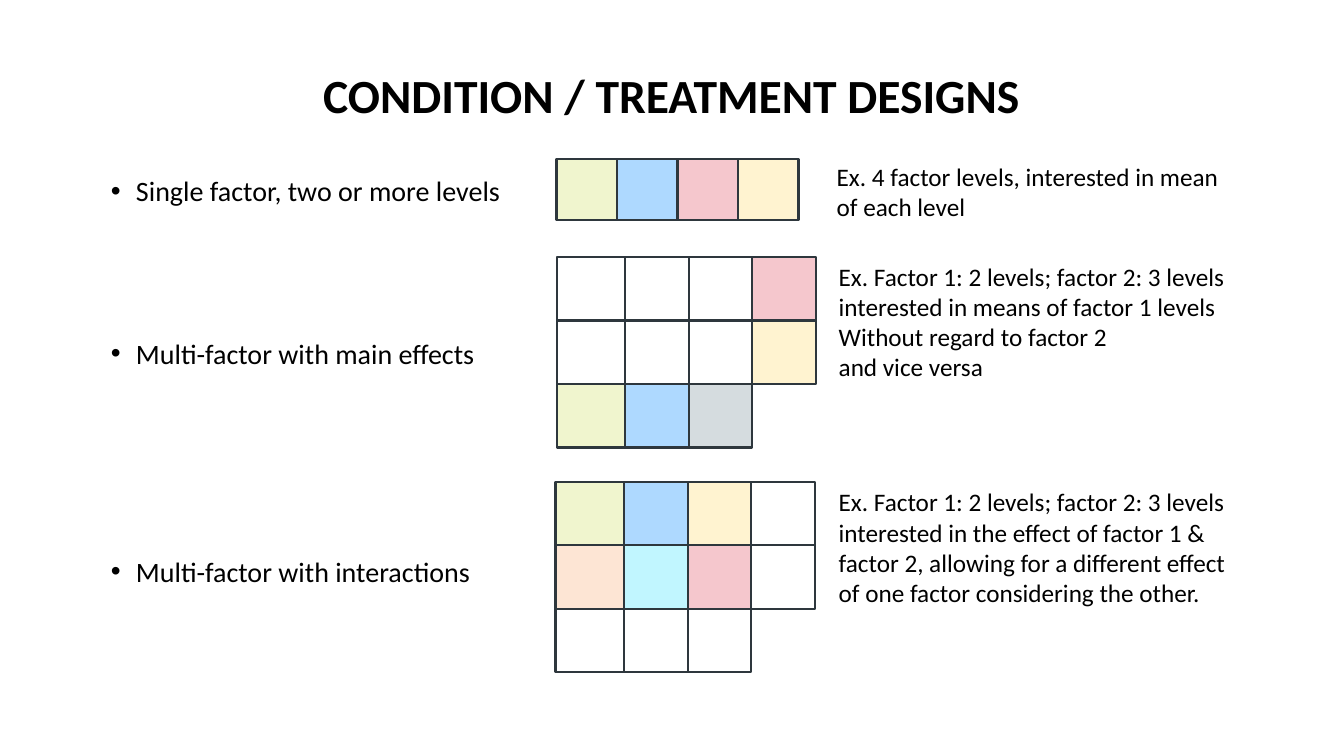
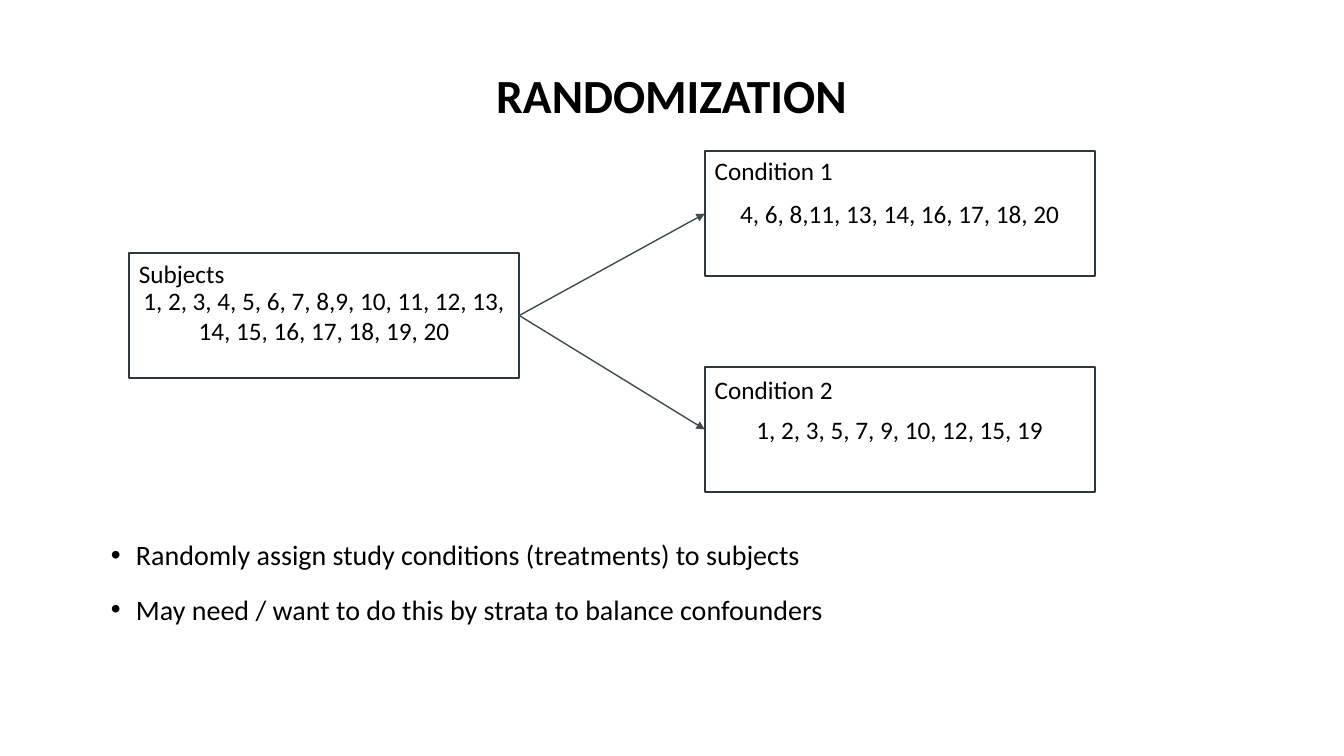
from lxml.etree import SubElement
from pptx import Presentation
from pptx.dml.color import RGBColor
from pptx.enum.shapes import MSO_CONNECTOR, MSO_SHAPE
from pptx.enum.text import MSO_ANCHOR, MSO_AUTO_SIZE, PP_ALIGN
from pptx.oxml.ns import qn
from pptx.util import Pt

PX = 9144  # EMU per px, 100 px to the inch

BLACK = RGBColor(0x00, 0x00, 0x00)
OUTLINE = RGBColor(0x2E, 0x37, 0x3D)
ARROW = RGBColor(0x3E, 0x4B, 0x52)
GREEN = RGBColor(0xF0, 0xF5, 0xCE)
BLUE = RGBColor(0xAE, 0xD9, 0xFF)
PINK = RGBColor(0xF5, 0xC7, 0xCD)
YELLOW = RGBColor(0xFF, 0xF3, 0xD0)
GRAY = RGBColor(0xD5, 0xDC, 0xDF)
PEACH = RGBColor(0xFD, 0xE5, 0xD4)
CYAN = RGBColor(0xC1, 0xF6, 0xFF)


def px(*lengths):
    return [length * PX for length in lengths]


def write(frame, text, size=18, bold=False, align=PP_ALIGN.LEFT,
          anchor=MSO_ANCHOR.TOP, spacing=1.0, bullet=False, gaps=()):
    """Fill a frame, one paragraph per line; gaps are points between them."""
    frame.word_wrap = True
    frame.auto_size = MSO_AUTO_SIZE.NONE
    frame.vertical_anchor = anchor
    frame.text = text
    for index, paragraph in enumerate(frame.paragraphs):
        if bullet:
            props = paragraph._p.get_or_add_pPr()
            props.set("marL", str(25 * PX))
            props.set("indent", str(-25 * PX))
            SubElement(props, qn("a:buFont")).set("typeface", "Arial")
            SubElement(props, qn("a:buChar")).set("char", "•")
        paragraph.alignment = align
        paragraph.line_spacing = spacing
        paragraph.space_before = Pt(gaps[index - 1] if index and gaps else 0)
        for run in paragraph.runs:
            run.font.name = "Calibri"
            run.font.size = Pt(size)
            run.font.bold = bold
            run.font.color.rgb = BLACK


class Deck:
    def __init__(self):
        self.file = Presentation()
        self.file.slide_width, self.file.slide_height = px(1333, 750)
        self.slide = None

    def new_slide(self, heading):
        self.slide = self.file.slides.add_slide(self.file.slide_layouts[5])
        title = self.slide.shapes.title
        title.left, title.top, title.width, title.height = px(100, 67, 1132, 145)
        write(title.text_frame, heading, size=34, bold=True,
              align=PP_ALIGN.CENTER, spacing=0.9)

    def text(self, left, top, width, height, text, **style):
        box = self.slide.shapes.add_textbox(*px(left, top, width, height))
        write(box.text_frame, text, **style)

    def bullets(self, top, height, text, gaps):
        self.text(100, top, 1132, height, text, size=20, spacing=1.2,
                  bullet=True, gaps=gaps)

    def box(self, left, top, width, height, fill=None):
        box = self.slide.shapes.add_shape(
            MSO_SHAPE.RECTANGLE, *px(left, top, width, height))
        box.shadow.inherit = False
        if fill is None:
            box.fill.background()
        else:
            box.fill.solid()
            box.fill.fore_color.rgb = fill
        box.line.color.rgb = OUTLINE
        box.line.width = Pt(1.5)
        return box

    def grid(self, left, top, widths, height, rows):
        for row, fills in enumerate(rows):
            for column, fill in enumerate(fills):
                self.box(left + sum(widths[:column]), top + row * height,
                         widths[column], height, fill)

    def group(self, left, top, label, label_top, members):
        group = self.box(left, top, 387, 124)
        write(group.text_frame, members, align=PP_ALIGN.CENTER,
              anchor=MSO_ANCHOR.MIDDLE)
        self.text(left, label_top, 150, 40, label)
        return group

    def arrow(self, source, target):
        arrow = self.slide.shapes.add_connector(
            MSO_CONNECTOR.STRAIGHT, 0, 0, 0, 0)
        arrow.begin_connect(source, 3)
        arrow.end_connect(target, 1)
        arrow.line.color.rgb = ARROW
        arrow.line.width = Pt(1)
        SubElement(arrow.line._get_or_add_ln(), qn("a:tailEnd")).set(
            "type", "triangle")
        SubElement(arrow._element.spPr, qn("a:effectLst"))


def condition_designs(deck):
    deck.new_slide("CONDITION / TREATMENT DESIGNS")
    deck.bullets(161, 473, "Single factor, two or more levels\n"
                 "Multi-factor with main effects\n"
                 "Multi-factor with interactions", gaps=(87, 127))

    # Design grids; None is an unfilled cell
    factor_widths = [68, 63, 63, 63]
    deck.grid(552, 158, [60] * 4, 60, [[GREEN, BLUE, PINK, YELLOW]])
    deck.grid(552, 255, factor_widths, 63, [
        [None, None, None, PINK],
        [None, None, None, YELLOW],
        [GREEN, BLUE, GRAY]])
    deck.grid(551, 478, factor_widths, 63, [
        [GREEN, BLUE, YELLOW, None],
        [PEACH, CYAN, PINK, None],
        [None, None, None]])

    # Examples
    deck.text(820, 155, 440, 71,
              "Ex. 4 factor levels, interested in mean\nof each level")
    deck.text(822, 254, 440, 131,
              "Ex. Factor 1: 2 levels; factor 2: 3 levels\n"
              "interested in means of factor 1 levels\n"
              "Without regard to factor 2\nand vice versa")
    deck.text(822, 478, 440, 131,
              "Ex. Factor 1: 2 levels; factor 2: 3 levels\n"
              "interested in the effect of factor 1 &\n"
              "factor 2, allowing for a different effect\n"
              "of one factor considering the other.")


def randomization(deck):
    deck.new_slide("RANDOMIZATION")
    deck.bullets(522, 112,
                 "Randomly assign study conditions (treatments) to subjects\n"
                 "May need / want to do this by strata to balance confounders",
                 gaps=(10,))

    # Subjects split into two conditions
    subjects = deck.group(
        128, 251, "Subjects", 251,
        "1, 2, 3, 4, 5, 6, 7, 8,9, 10, 11, 12, 13, 14, 15, 16, 17, 18, 19, 20")
    conditions = [
        deck.group(699, 150, "Condition 1", 149,
                   "4, 6, 8,11, 13, 14, 16, 17, 18, 20"),
        deck.group(699, 364, "Condition 2", 366,
                   "1, 2, 3, 5, 7, 9, 10, 12, 15, 19")]
    for condition in conditions:
        deck.arrow(subjects, condition)


def main():
    deck = Deck()
    condition_designs(deck)
    randomization(deck)
    deck.file.save("out.pptx")


if __name__ == "__main__":
    main()
